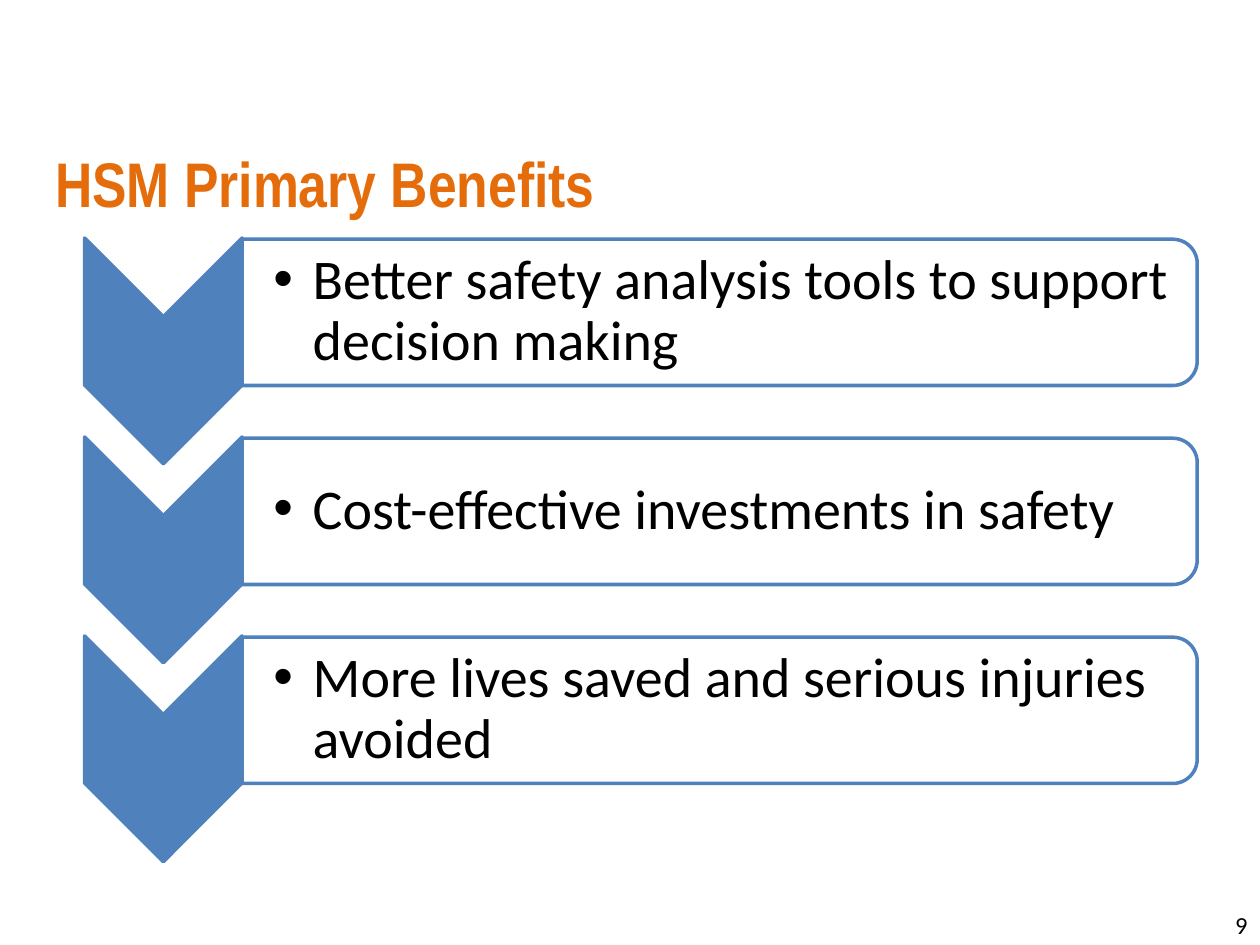
from lxml.etree import SubElement
from pptx import Presentation
from pptx.dml.color import RGBColor
from pptx.enum.shapes import MSO_SHAPE as SHAPE
from pptx.enum.text import MSO_ANCHOR as ANCHOR, PP_ALIGN as ALIGN
from pptx.oxml.ns import qn
from pptx.util import Pt


def rgb(color):
    return RGBColor.from_string(color)


def add_text(s, x, y, w, h, text, size, font, color, bold=False):
    tf = s.shapes.add_textbox(Pt(x), Pt(y), Pt(w), Pt(h)).text_frame
    tf.word_wrap = True
    tf.vertical_anchor = ANCHOR.MIDDLE
    p = tf.paragraphs[0]
    r = p.add_run()
    r.text = text
    r.font.size = Pt(size)
    r.font.name = font
    r.font.bold = bold
    r.font.color.rgb = rgb(color)
    return tf, p


BLUE = "4F81BD"
BENEFITS = [
    "Better safety analysis tools to support decision making",
    "Cost-effective investments in safety",
    "More lives saved and serious injuries avoided",
]

prs = Presentation()
prs.slide_width, prs.slide_height = Pt(720), Pt(540)
s = prs.slides.add_slide(prs.slide_layouts[6])

tf, p = add_text(s, 24.5, 60.5, 659.5, 90, "HSM Primary Benefits",
                 36, "Arial Narrow", "E46C0A", True)
p.line_spacing = Pt(40)

for i, benefit in enumerate(BENEFITS):
    dy = i * 113.7
    for kind, x, y, w, h, fill in [
        (SHAPE.CHEVRON, 28.8, 155.5, 129, 90, BLUE),
        (SHAPE.ROUND_2_SAME_RECTANGLE, 369.4, -94.4, 83.6, 545.8, "FFFFFF"),
    ]:
        sp = s.shapes.add_shape(kind, Pt(x), Pt(y + dy), Pt(w), Pt(h))
        sp.rotation = 90
        sp.shadow.inherit = False
        sp.fill.solid()
        sp.fill.fore_color.rgb = rgb(fill)
        sp.line.color.rgb = rgb(BLUE)
        sp.line.width = Pt(2)

    tf, p = add_text(s, 138.2, 140.4 + dy, 541.4, 75.6, benefit,
                     32, "Calibri", "000000")
    tf.margin_left = Pt(18)
    tf.margin_top = tf.margin_right = tf.margin_bottom = Pt(1.6)
    p.level = 1
    p.line_spacing = 0.9
    pPr = p._p.get_or_add_pPr()
    pPr.set("marL", str(Pt(22.5)))
    pPr.set("indent", str(Pt(-22.5)))
    SubElement(pPr, qn("a:buFont"), typeface="Arial")
    SubElement(pPr, qn("a:buChar"), char="•")

tf, p = add_text(s, 683.3, 514, 36.7, 28.8, "9", 14, "Calibri", "000000")
p.alignment = ALIGN.RIGHT

prs.save("out.pptx")
